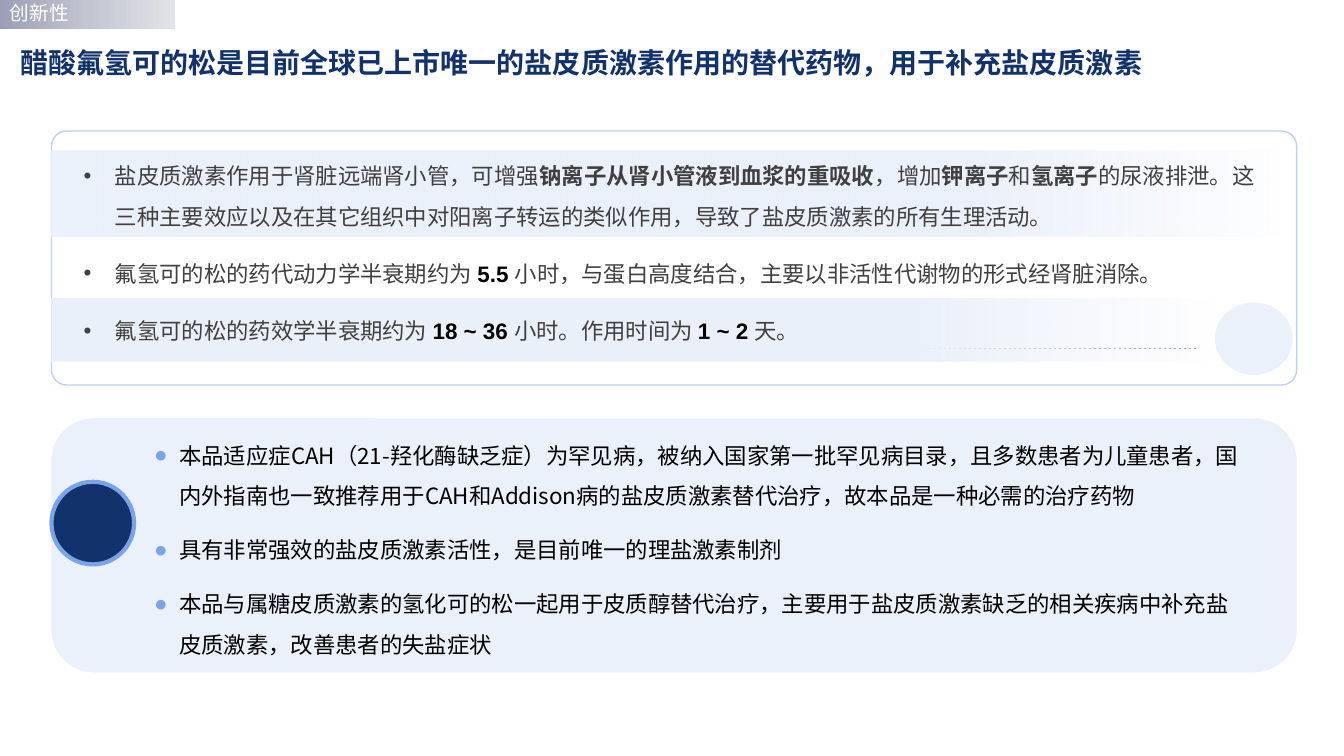
from dataclasses import dataclass
from typing import Optional

from lxml import etree
from pptx import Presentation
from pptx import util as u
from pptx.dml.color import RGBColor
from pptx.enum import dml, shapes, text
from pptx.oxml import parse_xml
from pptx.oxml.ns import nsdecls, qn

WIDE, HIGH = u.Inches(13.33), u.Inches(7.5)
LEFT, SPAN, TALL = 3.83, 92.65, 33.6
NAVY, BLUE, PALE, WHITE = "11326B", "7AA3EA", "EBF1FB", "FFFFFF"
GREY, BLACK = "404040", "000000"
SANS, ARIAL = "Noto Sans CJK SC", "Arial"
FADE = ((0, PALE, 100), (74, PALE, 100), (100, PALE, 0))
STEEL = ((0, "9B9FB6", 100), (50, "C3C5D1", 100), (100, "E2E3E8", 100))
RECT, ROUND, OVAL = (shapes.MSO_SHAPE.RECTANGLE, shapes.MSO_SHAPE.ROUNDED_RECTANGLE,
                     shapes.MSO_SHAPE.OVAL)


@dataclass
class Box:
    """A place in percent of the slide's width and height."""
    left: float
    top: float
    width: float
    height: float

    def place(self) -> tuple:
        """Return the place in slide units."""
        return (across(self.left), down(self.top), across(self.width), down(self.height))


@dataclass
class Form:
    """A filled preset shape."""
    kind: int
    box: Box
    fill: object
    line: Optional[str] = None
    weight: float = 1
    bend: Optional[float] = None


@dataclass
class Span:
    """A piece of text in one style."""
    words: str
    hue: str = GREY
    bold: bool = False


@dataclass
class Style:
    """The look of a bulleted list."""
    face: str
    mark: str
    tint: str
    indent: float
    before: float
    after: float


def across(share: float) -> int:
    """Turn a percent of the width into slide units."""
    return round(WIDE * share / 100)


def down(share: float) -> int:
    """Turn a percent of the height into slide units."""
    return round(HIGH * share / 100)


def color(code: str) -> RGBColor:
    """Read a hex colour."""
    return RGBColor.from_string(code)


def blend(shape, stops: tuple) -> None:
    """Fill a shape with a left-to-right gradient."""
    marks = "".join(
        f'<a:gs pos="{at * 1000}"><a:srgbClr val="{hue}"><a:alpha val="{part * 1000}"/>'
        f'</a:srgbClr></a:gs>' for at, hue, part in stops)
    grad = parse_xml(f'<a:gradFill {nsdecls("a")} rotWithShape="1"><a:gsLst>{marks}</a:gsLst>'
                     '<a:lin ang="0" scaled="0"/></a:gradFill>')
    shape._element.spPr.find(qn("a:prstGeom")).addnext(grad)


def draw(slide, form: Form):
    """Add one preset shape."""
    shape = slide.shapes.add_shape(form.kind, *form.box.place())
    shape.shadow.inherit = False
    if form.bend is not None:
        shape.adjustments[0] = form.bend
    if isinstance(form.fill, str):
        shape.fill.solid()
        shape.fill.fore_color.rgb = color(form.fill)
    else:
        blend(shape, form.fill)
    if form.line:
        shape.line.color.rgb = color(form.line)
        shape.line.width = u.Pt(form.weight)
    else:
        shape.line.fill.background()
    return shape


def ink(run, face: str, size: float, hue: str, bold: bool = False) -> None:
    """Style one run for Latin and Chinese letters."""
    run.font.name, run.font.size, run.font.bold = face, u.Pt(size), bold
    run.font.color.rgb = color(hue)
    east = etree.SubElement(run._r.get_or_add_rPr(), qn("a:ea"))
    east.set("typeface", SANS)


def label(shape, words: str, face: str, size: float, hue: str, bold: bool = False):
    """Put one left-aligned line in a shape, centred by height."""
    frame = shape.text_frame
    frame.text, frame.word_wrap = words, True
    frame.vertical_anchor = text.MSO_ANCHOR.MIDDLE
    line = frame.paragraphs[0]
    line.alignment = text.PP_ALIGN.LEFT
    ink(line.runs[0], face, size, hue, bold)
    return line


def bullet(line, style: Style) -> None:
    """Give a paragraph its bullet and hanging indent."""
    props = line._p.get_or_add_pPr()
    hang = u.Inches(style.indent)
    props.set("marL", str(hang))
    props.set("indent", str(-hang))
    tint = etree.SubElement(props, qn("a:buClr"))
    etree.SubElement(tint, qn("a:srgbClr")).set("val", style.tint)
    etree.SubElement(props, qn("a:buFont")).set("typeface", ARIAL)
    etree.SubElement(props, qn("a:buChar")).set("char", style.mark)


def listing(slide, box: Box, items: list, style: Style) -> None:
    """Add a bulleted list."""
    frame = slide.shapes.add_textbox(*box.place()).text_frame
    frame.word_wrap = True
    for rank, spans in enumerate(items):
        line = frame.add_paragraph() if rank else frame.paragraphs[0]
        bullet(line, style)
        line.line_spacing = 1.5
        line.space_before = u.Pt(style.before if rank else 0)
        line.space_after = u.Pt(style.after)
        for span in spans:
            run = line.add_run()
            run.text = span.words
            ink(run, style.face, 16, span.hue, span.bold)


def rule(slide, left: float, right: float, top: float) -> None:
    """Add a thin dashed level line."""
    line = slide.shapes.add_connector(shapes.MSO_CONNECTOR.STRAIGHT, across(left), down(top),
                                      across(right), down(top))
    line.line.color.rgb = color(BLUE)
    line.line.width = u.Pt(0.5)
    line.line.dash_style = dml.MSO_LINE.DASH
    etree.SubElement(line._element.spPr, qn("a:effectLst"))


FACTS = [
    [Span("盐皮质激素作用于肾脏远端肾小管，可增强"),
     Span("钠离子从肾小管液到血浆的重吸收", bold=True), Span("，增加"),
     Span("钾离子", bold=True), Span("和"), Span("氢离子", bold=True),
     Span("的尿液排泄。这三种主要效应以及在其它组织中对阳离子转运的类似作用，"
          "导致了盐皮质激素的所有生理活动。")],
    [Span("氟氢可的松的药代动力学半衰期约为 "), Span("5.5 ", BLACK, True),
     Span("小时，与蛋白高度结合，主要以非活性代谢物的形式经肾脏消除。")],
    [Span("氟氢可的松的药效学半衰期约为 "), Span("18 ~ 36 ", BLACK, True),
     Span("小时。作用时间为 "), Span("1 ~ 2 ", BLACK, True), Span("天。")],
]
GAINS = [[Span(words, BLACK)] for words in (
    "本品适应症CAH（21-羟化酶缺乏症）为罕见病，被纳入国家第一批罕见病目录，且多数患者为儿童患者，"
    "国内外指南也一致推荐用于CAH和Addison病的盐皮质激素替代治疗，故本品是一种必需的治疗药物",
    "具有非常强效的盐皮质激素活性，是目前唯一的理盐激素制剂",
    "本品与属糖皮质激素的氢化可的松一起用于皮质醇替代治疗，主要用于盐皮质激素缺乏的相关疾病中补充"
    "盐皮质激素，改善患者的失盐症状")]


def main() -> None:
    """Build and save the slide."""
    deck = Presentation()
    deck.slide_width, deck.slide_height = WIDE, HIGH
    slide = deck.slides.add_slide(deck.slide_layouts[6])
    title = slide.shapes.add_textbox(*Box(0.75, 3.87, 86.27, 9.33).place())
    label(title, "醋酸氟氢可的松是目前全球已上市唯一的盐皮质激素作用的替代药物，用于补充盐皮质激素",
          SANS, 20, NAVY, True).line_spacing = 0.9
    tag = draw(slide, Form(RECT, Box(0, -0.4, 13.05, 4.27), STEEL))
    label(tag, "创新性", ARIAL, 14, WHITE)
    draw(slide, Form(ROUND, Box(LEFT, 17.33, SPAN, TALL), WHITE, "BCD1F4", bend=0.06))
    draw(slide, Form(OVAL, Box(90.4, 40, 5.78, 9.6), PALE))
    rule(slide, 11.78, 88.97, 46.13)
    for band in (Box(LEFT, 19.87, 92.35, 11.47), Box(LEFT, 39.47, 86.27, 8.4)):
        draw(slide, Form(RECT, band, FADE))
    listing(slide, Box(5.48, 19.07, 89.95, 26.8), FACTS, Style(ARIAL, "•", GREY, 0.31, 0, 12))
    draw(slide, Form(ROUND, Box(LEFT, 55.33, SPAN, TALL), PALE))
    listing(slide, Box(10.73, 56, 82.97, 31.47), GAINS, Style(SANS, "●", BLUE, 0.25, 10, 0))
    draw(slide, Form(OVAL, Box(LEFT, 63.73, 6.15, 10.93), NAVY, BLUE, 3))
    deck.save("out.pptx")


if __name__ == "__main__":
    main()
